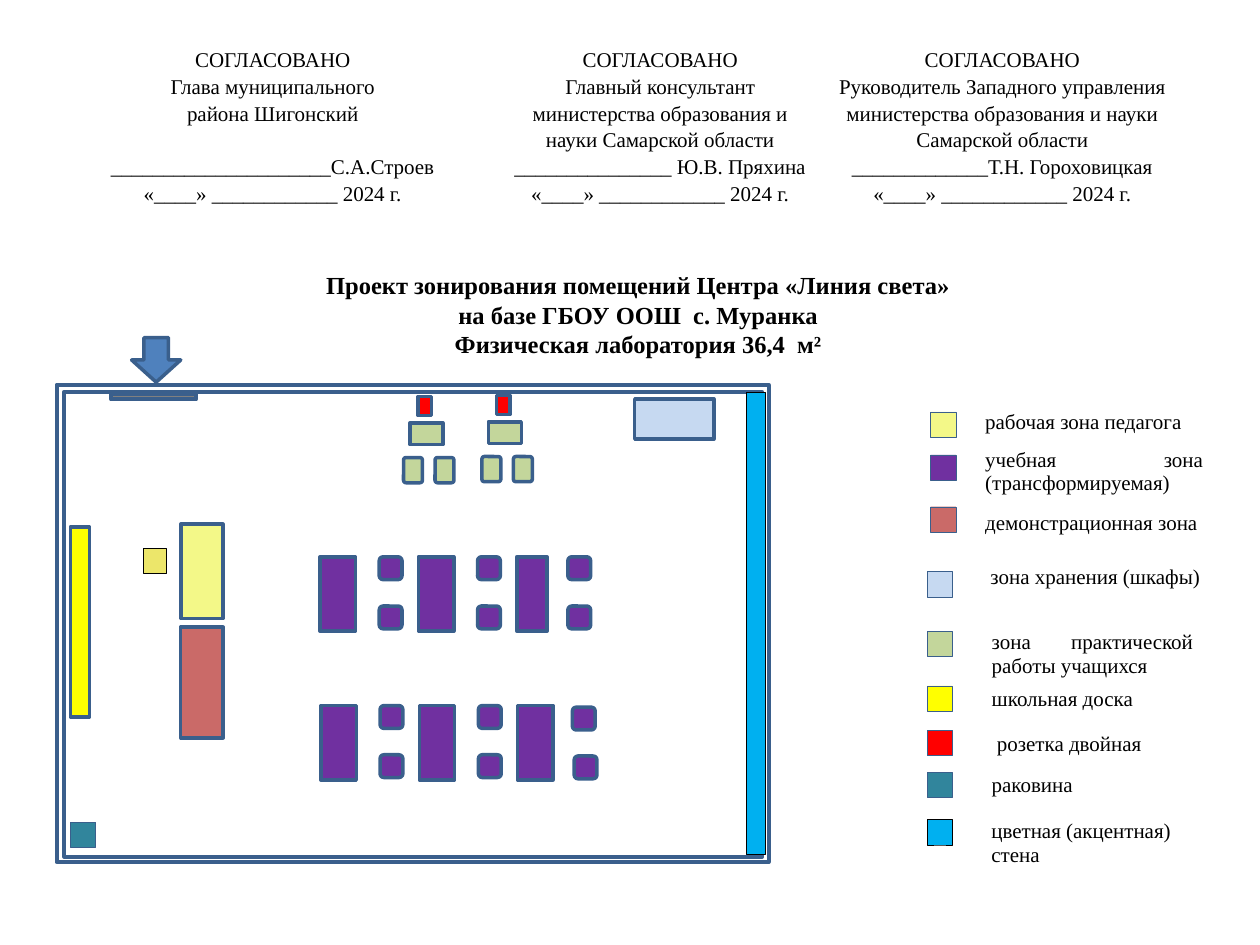
"""Zoning plan of a school physics laboratory, with approvals and a colour legend."""
from pptx import Presentation
from pptx.dml.color import RGBColor
from pptx.enum import shapes, text
from pptx.util import Pt

THEME = {
    "font": "Times New Roman", "text": "000000", "body": 12, "title": 14,
    "outline": "3A5F8C", "black": "000000",
    "teacher": "F3F888", "teacher_chair": "ECE66A", "study": "7030A0",
    "demo": "CA6A68", "storage": "C6D9F1", "practice": "C3D69B",
    "board": "FFFF00", "socket": "FF0000", "sink": "31859C",
    "accent": "00B0F0", "door": "808080", "entrance": "4F81BD",
}
ALIGN, KIND = text.PP_ALIGN, shapes.MSO_SHAPE

TITLE = ["Проект зонирования помещений Центра «Линия света»",
         "на базе ГБОУ ООШ  с. Муранка",
         "Физическая лаборатория 36,4  м²"]
AGREED, DATE = "СОГЛАСОВАНО", "«____» ____________ 2024 г."
APPROVALS = [
    (["Глава муниципального", "района Шигонский"],
     "_____________________С.А.Строев", 15.3),
    (["Главный консультант министерства образования и науки Самарской области"],
     "_______________ Ю.В. Пряхина", 0),
    (["Руководитель Западного управления министерства образования и науки Самарской области"],
     "_____________Т.Н. Гороховицкая", 0),
]
LEGEND = [
    {"at": (536.4, 231.1), "cols": (19.4, 139), "side": 7.2, "top": 3.6, "align": ALIGN.JUSTIFY,
     "rows": [("рабочая зона педагога", 21.6), ("учебная зона (трансформируемая)", 36),
              ("демонстрационная зона", 31), (" зона хранения (шкафы)", 31), ("", 14)]},
    {"at": (538.6, 357.1), "cols": (20.9, 129.6), "side": 7.2, "top": 3.6, "align": ALIGN.JUSTIFY,
     "rows": [("зона практической работы учащихся", 32.4), ("школьная доска", 25.6),
              (" розетка двойная", 23.4), ("раковина", 23)]},
    {"at": (538.6, 468.7), "cols": (22.3, 141.8), "side": 5.6, "top": 0, "align": ALIGN.LEFT,
     "rows": [("цветная (акцентная) стена", 28.8)]},
]
SWATCH = 14.4
SWATCH_COLUMNS = [
    (531.8, [("teacher", 235.4), ("study", 259.9), ("demo", 289.6)]),
    (529.9, [("storage", 326.7), ("practice", 360.7), ("board", 391.9),
             ("socket", 417.4), ("sink", 441.4), ("accent", 468.5)]),
]

ROOM = [
    (None, (32.4, 219.8, 406.8, 272.9), 2.25),
    (None, (36.7, 223.9, 398.9, 265.7), 2.25),
    ("door", (63.4, 225.4, 48.6, 2.9), 2.25),
    ("teacher", (103.4, 299.5, 24, 54), 2),
    ("demo", (103.2, 358.4, 24.3, 63.2), 2),
    ("board", (40.3, 301, 10.8, 108.7), 2),
    ("storage", (362.7, 228, 45.2, 23), 2),
    ("sink", (40.3, 469.8, SWATCH, SWATCH), 0.25),
]
BLACK_EDGED = [("accent", (426.5, 224.1, 10.8, 264.4)),
               ("teacher_chair", (82.1, 313.6, 13, 14.4))]
STATIONS = [(230.6, 226.6), (275.4, 226)]
STATION = [("socket", KIND.RECTANGLE, (8.2, 0, 7.9, 10.8)),
           ("practice", KIND.RECTANGLE, (3.6, 15.1, 18.9, 12.4)),
           ("practice", KIND.ROUNDED_RECTANGLE, (0, 34.9, 10.8, 14.4)),
           ("practice", KIND.ROUNDED_RECTANGLE, (18, 34.9, 10.8, 14.4))]
DESK_ROWS = [
    {"at": (182.9, 318.2), "widths": (20.2, 20.2, 17.3),
     "last_chairs": [(324.5, 318.2), (324.5, 346.3)]},
    {"at": (183.4, 403.2), "widths": (20.2, 20.2, 20.2),
     "last_chairs": [(327.1, 404.1), (328.1, 432)]},
]
DESK_STEP, DESK_HEIGHT = 56.2, 42.5
CHAIR, CHAIR_DX, CHAIR_DY = 13, 33.8, 28.1


def rgb(key):
    return RGBColor.from_string(THEME[key])


def assign(target, values):
    for key, value in values.items():
        setattr(target, key, value)


def draw(slide, fill, box, weight=2, kind=KIND.RECTANGLE, line="outline", corner=None):
    part = slide.shapes.add_shape(kind, *map(Pt, box))
    part.shadow.inherit = False
    if fill:
        part.fill.solid()
        part.fill.fore_color.rgb = rgb(fill)
    else:
        part.fill.background()
    part.line.color.rgb = rgb(line)
    part.line.width = Pt(weight)
    if corner is not None:
        part.adjustments[0] = corner


def write(frame, lines, size, align, spacing=None, bold=False):
    for index, line in enumerate(lines):
        paragraph = frame.paragraphs[0] if index == 0 else frame.add_paragraph()
        assign(paragraph, {"alignment": align, "line_spacing": spacing})
        if line:
            run = paragraph.add_run()
            run.text = line
            assign(run.font, {"name": THEME["font"], "size": Pt(size), "bold": bold})
            run.font.color.rgb = rgb("text")
        else:
            paragraph._p.get_or_add_endParaRPr().set("sz", str(size * 100))


def add_grid(slide, at, cols, heights):
    size = (sum(cols), sum(heights))
    grid = slide.shapes.add_table(len(heights), len(cols), *map(Pt, at + size)).table
    assign(grid, {"first_row": False, "horz_banding": False})
    for column, width in zip(grid.columns, cols):
        column.width = Pt(width)
    for row, height in zip(grid.rows, heights):
        row.height = Pt(height)
    for cell in grid.iter_cells():
        cell.fill.background()
    return grid


def add_approvals(slide):
    grid = add_grid(slide, (28.1, 22.3), (255.6, 187.2, 203.8), [123.1])
    for cell, (post, signature, gap) in zip(grid.rows[0].cells, APPROVALS):
        write(cell.text_frame, [AGREED, *post, signature, DATE], THEME["body"], ALIGN.CENTER, 1.15)
        cell.text_frame.paragraphs[-2].space_before = Pt(gap)


def add_legend(slide):
    for part in LEGEND:
        grid = add_grid(slide, part["at"], part["cols"], [height for _, height in part["rows"]])
        margins = {"margin_left": Pt(part["side"]), "margin_right": Pt(part["side"]),
                   "margin_top": Pt(part["top"]), "margin_bottom": 0}
        for row, (label, _) in zip(grid.rows, part["rows"]):
            for cell, line in zip(row.cells, ("", label)):
                assign(cell, margins if line else dict(margins, margin_top=0))
                write(cell.text_frame, [line], THEME["body"], part["align"])
    for x, swatches in SWATCH_COLUMNS:
        for zone, y in swatches:
            line, weight = ("black", 0.5) if zone == "accent" else ("outline", 0.25)
            draw(slide, zone, (x, y, SWATCH, SWATCH), weight, line=line)


def add_plan(slide):
    for zone, box, weight in ROOM:
        draw(slide, zone, box, weight)
    for zone, box in BLACK_EDGED:
        draw(slide, zone, box, 0.5, line="black")
    draw(slide, "entrance", (75.2, 193, 28.1, 25.4), kind=KIND.DOWN_ARROW)
    for left, top in STATIONS:
        for zone, kind, (x, y, width, height) in STATION:
            corner = 0.13 if kind == KIND.ROUNDED_RECTANGLE else None
            draw(slide, zone, (left + x, top + y, width, height), kind=kind, corner=corner)
    for desks in DESK_ROWS:
        left, top = desks["at"]
        for index, width in enumerate(desks["widths"]):
            draw(slide, "study", (left + index * DESK_STEP, top, width, DESK_HEIGHT))
        chairs = [(left + CHAIR_DX + index * DESK_STEP, top + dy)
                  for index in range(2) for dy in (0, CHAIR_DY)]
        for x, y in chairs + desks["last_chairs"]:
            draw(slide, "study", (x, y, CHAIR, CHAIR), kind=KIND.ROUNDED_RECTANGLE)


def main():
    deck = Presentation()
    assign(deck, {"slide_width": Pt(720), "slide_height": Pt(540)})
    slide = deck.slides.add_slide(deck.slide_layouts[5])
    heading = slide.shapes.title
    assign(heading, {"left": Pt(63.4), "top": Pt(150.6), "width": Pt(602.6), "height": Pt(58.3)})
    assign(heading.text_frame, {"word_wrap": True, "auto_size": text.MSO_AUTO_SIZE.NONE,
                                "vertical_anchor": text.MSO_ANCHOR.MIDDLE})
    write(heading.text_frame, TITLE, THEME["title"], ALIGN.CENTER, Pt(16.8), True)
    add_plan(slide)
    add_legend(slide)
    add_approvals(slide)
    deck.save("out.pptx")


if __name__ == "__main__":
    main()
